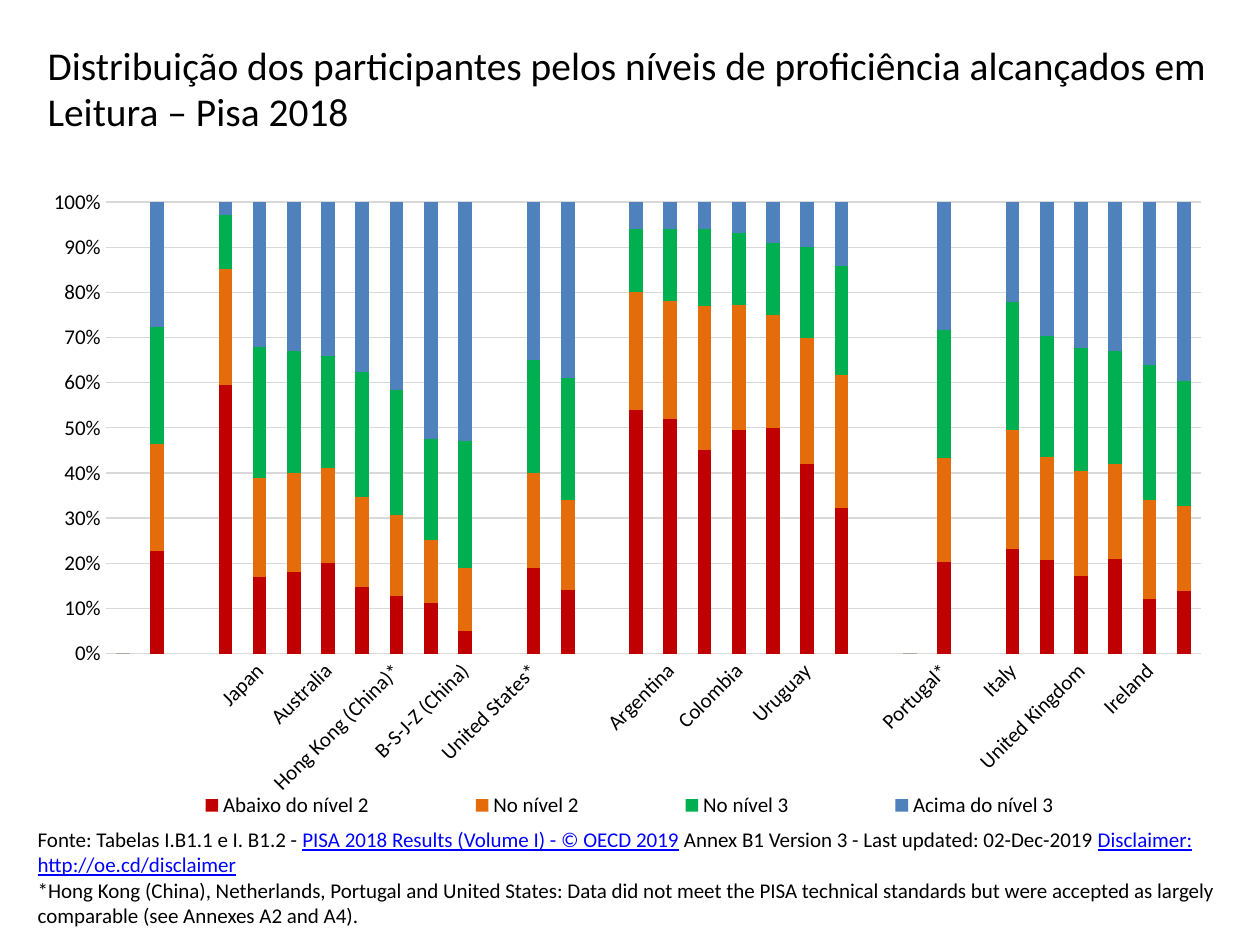
"""Build the slide on reading proficiency levels in Pisa 2018."""
from lxml import etree
from pptx import Presentation
from pptx import util as u
from pptx.chart import data
from pptx.dml.color import RGBColor
from pptx.enum import chart as charts
from pptx.oxml import ns

BLACK = RGBColor(0x00, 0x00, 0x00)
LINK_BLUE = RGBColor(0x00, 0x00, 0xFF)
GRID_GREY = RGBColor(0xD9, 0xD9, 0xD9)
RED = RGBColor(0xC0, 0x00, 0x00)
ORANGE = RGBColor(0xE4, 0x6C, 0x0A)
GREEN = RGBColor(0x00, 0xB0, 0x50)
BLUE = RGBColor(0x4F, 0x81, 0xBD)

COUNTRIES = [
    "", "OECD average", "", "Thailand", "Japan", "Chinese Taipei", "Australia", "Korea",
    "Hong Kong (China)*", "Singapore", "B-S-J-Z (China)", "", "United States*", "Canada", "",
    "Peru", "Argentina", "Mexico", "Colombia", "Brazil", "Uruguay", "Chile", "", "Spain",
    "Portugal*", "", "Italy", "France", "United Kingdom", "Germany", "Ireland", "Finland",
]
LEVELS = [
    ("Abaixo do nível 2", RED,
     [0, 23, None, 60, 17, 18, 20, 15, 13, 11, 5, None, 19, 14, None, 54, 52, 45, 50, 50, 42, 32,
      None, 0, 20, None, 23, 21, 17, 21, 12, 14]),
    ("No nível 2", ORANGE,
     [0, 24, None, 26, 22, 22, 21, 20, 18, 14, 14, None, 21, 20, None, 26, 26, 32, 28, 25, 28, 29,
      None, 0, 23, None, 26, 23, 23, 21, 22, 19]),
    ("No nível 3", GREEN,
     [0, 26, None, 12, 29, 27, 25, 28, 28, 22, 28, None, 25, 27, None, 14, 16, 17, 16, 16, 20, 24,
      None, 0, 28, None, 28, 27, 27, 25, 30, 28]),
    ("Acima do nível 3", BLUE,
     [0, 28, None, 3, 32, 33, 34, 38, 42, 52, 53, None, 35, 39, None, 6, 6, 6, 7, 9, 10, 14,
      None, 0, 28, None, 22, 30, 32, 33, 36, 40]),
]
TITLE = "Distribuição dos participantes pelos níveis de proficiência alcançados em Leitura – Pisa 2018"
SOURCE = [
    ("Fonte: Tabelas I.B1.1 e I. B1.2 - ", False),
    ("PISA 2018 Results (Volume I) - © OECD 2019", True),
    (" Annex B1 Version 3 - Last updated: 02-Dec-2019 ", False),
    ("Disclaimer: http://oe.cd/disclaimer", True),
]
NOTE = ("*Hong Kong (China), Netherlands, Portugal and United States: Data did not meet the PISA "
        "technical standards but were accepted as largely comparable (see Annexes A2 and A4).")


def add_text(box, paragraphs, size, spacing):
    left, top, width, height = map(u.Cm, box)
    frame = slide.shapes.add_textbox(left, top, width, height).text_frame
    frame.word_wrap = True
    for index, runs in enumerate(paragraphs):
        paragraph = frame.add_paragraph() if index else frame.paragraphs[0]
        paragraph.line_spacing = spacing
        for words, linked in runs:
            run = paragraph.add_run()
            run.text = words
            formats = {"name": "Calibri", "size": u.Pt(size), "underline": linked}
            for name, value in formats.items():
                setattr(run.font, name, value)
            run.font.color.rgb = LINK_BLUE if linked else BLACK


def set_layout(parent, position, values):
    for old in parent.findall(ns.qn("c:layout")):
        parent.remove(old)
    layout = etree.Element(ns.qn("c:layout"))
    manual = etree.SubElement(layout, ns.qn("c:manualLayout"))
    for name, value in values.items():
        etree.SubElement(manual, ns.qn("c:" + name)).set("val", str(value))
    parent.insert(position, layout)


presentation = Presentation()
presentation.slide_width = u.Cm(25.4)
presentation.slide_height = u.Cm(19.05)
slide = presentation.slides.add_slide(presentation.slide_layouts[6])

add_text((0.71, 0.76, 24, 3.18), [[(TITLE, False)]], 22.5, 0.97)

chart_data = data.CategoryChartData()
chart_data.categories = COUNTRIES
for name, color, values in LEVELS:
    chart_data.add_series(name, values)
chart = slide.shapes.add_chart(
    charts.XL_CHART_TYPE.COLUMN_STACKED_100,
    u.Cm(0.69), u.Cm(3.53), u.Cm(24), u.Cm(13.59), chart_data).chart
for name, value in {"name": "Calibri", "size": u.Pt(12)}.items():
    setattr(chart.font, name, value)
chart.font.color.rgb = BLACK
chart.has_title = False

plot = chart.plots[0]
for name, value in {"gap_width": 150, "overlap": 100, "vary_by_categories": False}.items():
    setattr(plot, name, value)
for series, (name, color, values) in zip(plot.series, LEVELS):
    series.format.fill.solid()
    series.format.fill.fore_color.rgb = color

for axis in (chart.category_axis, chart.value_axis):
    axis.major_tick_mark = axis.minor_tick_mark = charts.XL_TICK_MARK.NONE
    axis.tick_labels.font.size = u.Pt(12)
chart.value_axis.tick_labels.number_format = "0%"
chart.value_axis.tick_labels.number_format_is_linked = False
chart.value_axis.maximum_scale = 1
chart.value_axis.major_unit = 0.1
chart.value_axis.format.line.fill.background()
for line in (chart.category_axis.format.line, chart.value_axis.major_gridlines.format.line):
    line.color.rgb = GRID_GREY
    line.width = u.Pt(0.75)
label_body = chart.category_axis._element.find(ns.qn("c:txPr")).find(ns.qn("a:bodyPr"))
label_body.set("rot", "-2700000")
label_body.set("vert", "horz")

chart.has_legend = True
chart.legend.position = charts.XL_LEGEND_POSITION.BOTTOM
chart.legend.include_in_layout = False
edges = {"xMode": "edge", "yMode": "edge"}
set_layout(chart.legend._element, 1, {**edges, "x": 0.06, "y": 0.91, "w": 0.88, "h": 0.05})
set_layout(plot._element.getparent(), 0,
           {"layoutTarget": "inner", **edges, "x": 0.06, "y": 0.04, "w": 0.92, "h": 0.67})

add_text((0.51, 16.54, 24.89, 2.31), [SOURCE, [(NOTE, False)]], 12, 1.0)

presentation.save("out.pptx")
